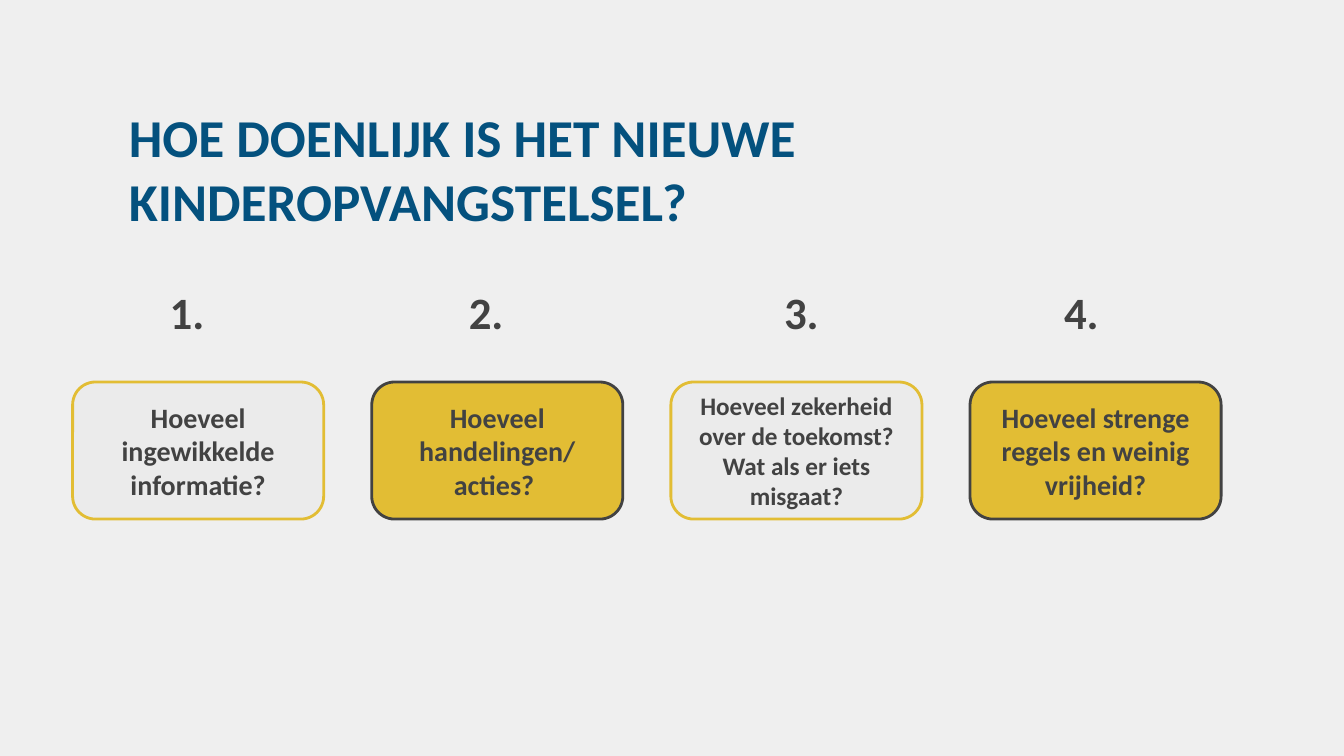
from pptx import Presentation
from pptx.dml.color import RGBColor
from pptx.enum.shapes import MSO_SHAPE
from pptx.enum.text import MSO_ANCHOR, PP_ALIGN
from pptx.util import Inches, Pt

COLORS = {"back": "EFEFEF", "title": "04517E", "dark": "424242",
          "gold": "E2BD34", "light": "EBEBEB"}
LEFT, PITCH, WIDTH = 0.72, 2.967, 2.49
CARDS = [
    ("1. ", 0.82, "Hoeveel ingewikkelde informatie?", 20),
    ("2. ", 0.82, "Hoeveel handelingen/\nacties? ", 20),
    ("3. ", 0.98, "Hoeveel zekerheid over de toekomst? Wat als er iets misgaat?", 18),
    ("4. ", 0.79, "Hoeveel strenge regels en weinig vrijheid?", 20),
]


def color(name):
    """Return the named colour."""
    return RGBColor.from_string(COLORS[name])


def write(shape, text, size, ink="dark", align=PP_ALIGN.CENTER, anchor=MSO_ANCHOR.MIDDLE):
    """Put bold text in a shape."""
    frame = shape.text_frame
    frame.word_wrap = True
    frame.vertical_anchor = anchor
    para = frame.paragraphs[0]
    para.text = text
    para.alignment = align
    for run in para.runs:
        font = run.font
        font.name, font.size, font.bold = "Calibri", Pt(size), True
        font.color.rgb = color(ink)


def add_title(slide, box):
    """Place the heading in its box."""
    shape = slide.shapes.add_textbox(*map(Inches, box))
    write(shape, "HOE DOENLIJK IS HET NIEUWE KINDEROPVANGSTELSEL?", 38,
          ink="title", align=PP_ALIGN.LEFT)


def add_card(slide, box, card, fill, line):
    """Place a rounded card with its number above it."""
    left, top, width, height = box
    label, shift, text, size = card
    shape = slide.shapes.add_shape(MSO_SHAPE.ROUNDED_RECTANGLE, *map(Inches, box))
    shape.shadow.inherit = False
    shape.fill.solid()
    shape.fill.fore_color.rgb = color(fill)
    shape.line.color.rgb = color(line)
    shape.line.width = Pt(2)
    write(shape, text, size)
    number = slide.shapes.add_textbox(
        Inches(left + shift), Inches(top - 1.01), Inches(0.73), Inches(0.64))
    write(number, label, 32, anchor=MSO_ANCHOR.TOP)


def main():
    """Build and save the slide."""
    deck = Presentation()
    deck.slide_width, deck.slide_height = Inches(13.33), Inches(7.5)
    slide = deck.slides.add_slide(deck.slide_layouts[6])
    slide.background.fill.solid()
    slide.background.fill.fore_color.rgb = color("back")
    add_title(slide, (1.18, 0.98, 11.31, 1.38))
    styles = [("light", "gold"), ("gold", "dark")]
    for i, card in enumerate(CARDS):
        add_card(slide, (LEFT + i * PITCH, 3.79, WIDTH, 1.36), card, *styles[i % 2])
    deck.save("out.pptx")


if __name__ == "__main__":
    main()
